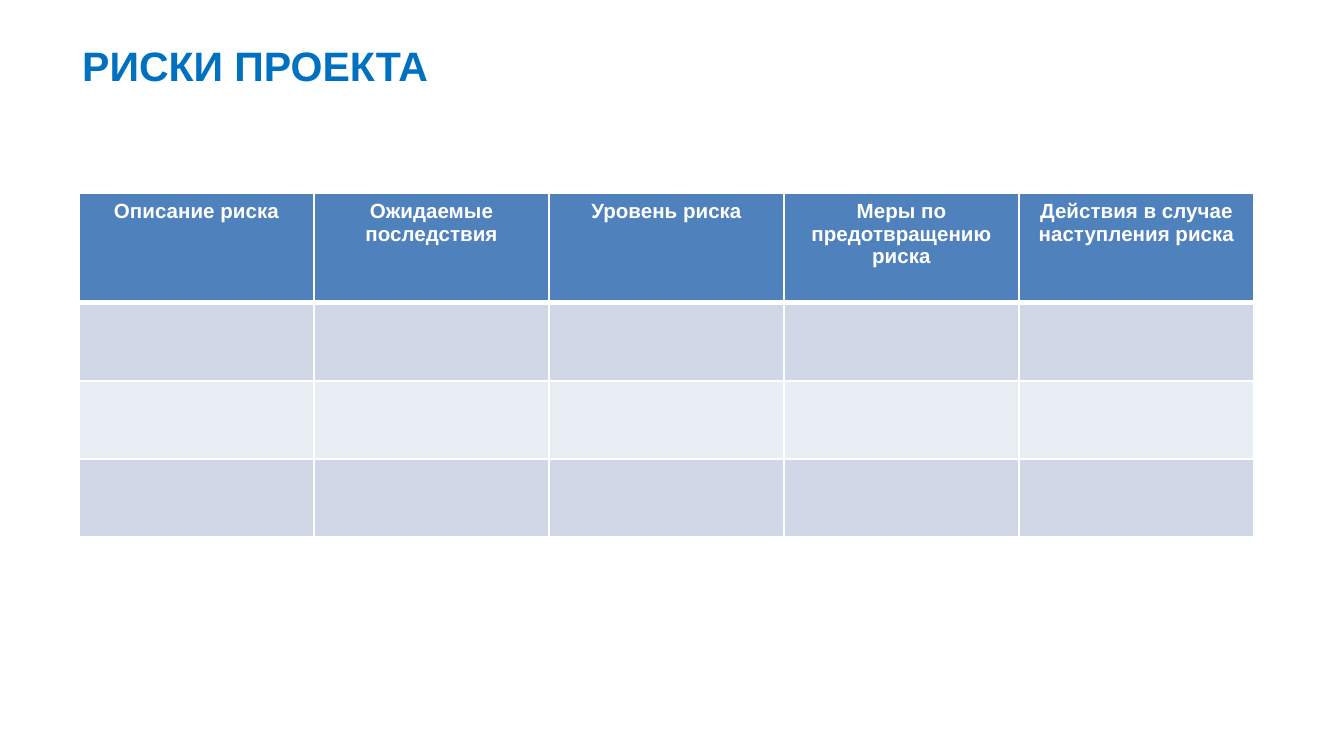
import pptx
import pptx.dml.color
import pptx.enum.text
import pptx.oxml
import pptx.oxml.ns
import pptx.util

EMU_PER_PX = 914400 / 134.4
FONT = "Arial"
WHITE = "FFFFFF"
HEADER_FILL = "4F81BD"
BAND_FILLS = ("D0D8E8", "E9EDF4")
HEADERS = (
    "Описание риска",
    "Ожидаемые последствия",
    "Уровень риска",
    "Меры по предотвращению риска",
    "Действия в случае наступления риска",
)
RISK_ROWS = 3


def px(length):
    return pptx.util.Emu(round(length * EMU_PER_PX))


def color(hex_string):
    return pptx.dml.color.RGBColor.from_string(hex_string)


def style_font(paragraph, size, hex_string):
    paragraph.font.name = FONT
    paragraph.font.size = pptx.util.Pt(size)
    paragraph.font.bold = True
    paragraph.font.color.rgb = color(hex_string)


def set_borders(cell, **widths):
    """Give the cell white borders; widths are points keyed by L, R, T, B."""
    properties = cell._tc.get_or_add_tcPr()
    namespace = pptx.oxml.ns.nsdecls("a")
    for index, (side, width) in enumerate(widths.items()):
        border = pptx.oxml.parse_xml(
            f'<a:ln{side} {namespace} w="{pptx.util.Pt(width)}"><a:solidFill>'
            f'<a:srgbClr val="{WHITE}"/></a:solidFill></a:ln{side}>'
        )
        properties.insert(index, border)


def add_title(slide, left, top, width, height):
    shape = slide.shapes.add_textbox(px(left), px(top), px(width), px(height))
    frame = shape.text_frame
    frame.word_wrap = True
    frame.margin_top = px(12)
    frame.vertical_anchor = pptx.enum.text.MSO_ANCHOR.TOP
    paragraph = frame.paragraphs[0]
    paragraph.text = "РИСКИ ПРОЕКТА"
    style_font(paragraph, 22, "0070C0")


def add_risk_table(slide, left, top, width, header_height, row_height):
    height = header_height + RISK_ROWS * row_height
    table = slide.shapes.add_table(
        RISK_ROWS + 1, len(HEADERS), px(left), px(top), px(width), px(height)
    ).table
    for column in table.columns:
        column.width = px(width / len(HEADERS))
    for row_index, row in enumerate(table.rows):
        is_header = row_index == 0
        row.height = px(header_height if is_header else row_height)
        fill = HEADER_FILL if is_header else BAND_FILLS[(row_index - 1) % 2]
        for cell, header in zip(row.cells, HEADERS):
            cell.fill.solid()
            cell.fill.fore_color.rgb = color(fill)
            set_borders(cell, L=1, R=1, T=3 if row_index == 1 else 1,
                        B=3 if is_header else 1)
            if is_header:
                paragraph = cell.text_frame.paragraphs[0]
                paragraph.text = header
                paragraph.alignment = pptx.enum.text.PP_ALIGN.CENTER
                style_font(paragraph, 11, WHITE)


def main():
    presentation = pptx.Presentation()
    presentation.slide_width = px(1344)
    presentation.slide_height = px(756)
    slide = presentation.slides.add_slide(presentation.slide_layouts[6])
    add_title(slide, left=69, top=28, width=953, height=85)
    add_risk_table(slide, left=79, top=193, width=1175,
                   header_height=110, row_height=78)
    presentation.save("out.pptx")


if __name__ == "__main__":
    main()
